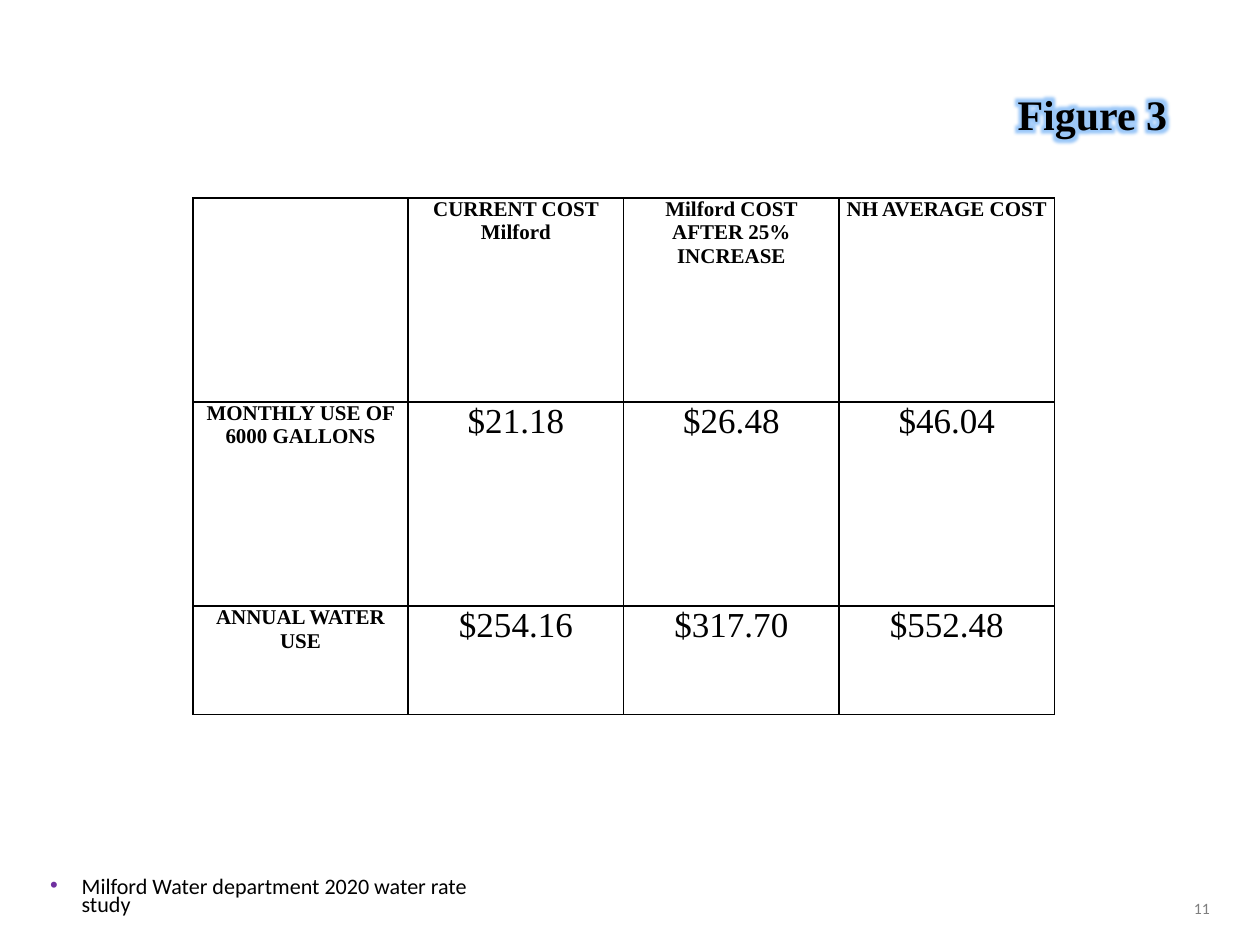
import lxml.etree
import pptx
import pptx.dml.color
import pptx.enum.text
import pptx.oxml.ns
import pptx.util

Inches = pptx.util.Inches
Align = pptx.enum.text.PP_ALIGN
Anchor = pptx.enum.text.MSO_ANCHOR
qn = pptx.oxml.ns.qn

# Content
TITLE = "Figure 3"
SOURCE = "Milford Water department 2020 water rate study"
PAGE_NUMBER = "11"
COSTS = [
    ["", "CURRENT COST Milford", "Milford COST AFTER 25% INCREASE", "NH AVERAGE COST"],
    ["MONTHLY USE OF 6000 GALLONS", "$21.18", "$26.48", "$46.04"],
    ["ANNUAL WATER USE", "$254.16", "$317.70", "$552.48"],
]
ROW_HEIGHTS = [1.62, 1.62, 0.86]
COLUMN_WIDTH = 1.71

THEME = {
    "serif": "Times New Roman", "sans": "Calibri",
    "ink": "000000", "muted": "7F7F7F", "bullet": "7030A0", "glow": "3891F3",
    "title": 24, "label": 12, "value": 20, "source": 12.6, "number": 9,
}


def add_xml(parent, tag, **attributes):
    return lxml.etree.SubElement(parent, qn(tag), attributes)


def write(frame, text, *, size, font="serif", color="ink", bold=False, align=Align.CENTER):
    para = frame.paragraphs[0]
    para.alignment = align
    span = para.add_run()
    span.text = text
    span.font.size = pptx.util.Pt(THEME[size])
    span.font.name = THEME[font]
    span.font.bold = bold
    span.font.color.rgb = pptx.dml.color.RGBColor.from_string(THEME[color])
    return para, span


def add_box(page, left, top, width, height, text, *, wrap=True, anchor=Anchor.TOP, **style):
    box = page.shapes.add_textbox(Inches(left), Inches(top), Inches(width), Inches(height))
    box.text_frame.word_wrap = wrap
    box.text_frame.vertical_anchor = anchor
    return write(box.text_frame, text, **style)


def add_glow(span, color, radius, alpha):
    properties = span.font._element
    effects = lxml.etree.Element(qn("a:effectLst"))
    properties.find(qn("a:solidFill")).addnext(effects)
    glow = add_xml(effects, "a:glow", rad=str(radius))
    shade = add_xml(glow, "a:srgbClr", val=color)
    add_xml(shade, "a:alpha", val=str(alpha * 1000))


def add_bullet(para, color, indent):
    properties = para._p.get_or_add_pPr()
    properties.set("marL", str(indent))
    properties.set("indent", str(-indent))
    add_xml(add_xml(properties, "a:buClr"), "a:srgbClr", val=color)
    add_xml(properties, "a:buFont", typeface="Arial")
    add_xml(properties, "a:buChar", char="•")


def format_cell(cell):
    cell.margin_left = cell.margin_right = Inches(0.06)
    cell.margin_top = cell.margin_bottom = 0
    properties = cell._tc.get_or_add_tcPr()
    for side in ("a:lnL", "a:lnR", "a:lnT", "a:lnB"):
        line = add_xml(properties, side, w=str(pptx.util.Pt(1)))
        add_xml(add_xml(line, "a:solidFill"), "a:srgbClr", val=THEME["ink"])
    cell.fill.background()


def add_cost_table(page, left, top):
    columns = len(COSTS[0])
    table = page.shapes.add_table(
        len(COSTS), columns, Inches(left), Inches(top),
        Inches(COLUMN_WIDTH * columns), Inches(sum(ROW_HEIGHTS))).table
    table.first_row = table.horz_banding = False
    for column in table.columns:
        column.width = Inches(COLUMN_WIDTH)
    for r, texts in enumerate(COSTS):
        table.rows[r].height = Inches(ROW_HEIGHTS[r])
        for c, text in enumerate(texts):
            cell = table.cell(r, c)
            format_cell(cell)
            is_label = r == 0 or c == 0
            if text:
                write(cell.text_frame, text, size="label" if is_label else "value", bold=is_label)


def main():
    deck = pptx.Presentation()
    deck.slide_width, deck.slide_height = Inches(10), Inches(7.5)
    page = deck.slides.add_slide(deck.slide_layouts[6])

    # Source note
    para, span = add_box(page, 0.3, 6.93, 3.6, 0.41, SOURCE,
                         size="source", font="sans", align=Align.LEFT)
    para.line_spacing = 0.7
    para.space_before = pptx.util.Pt(10)
    add_bullet(para, THEME["bullet"], Inches(0.25))

    # Page number
    add_box(page, 7.45, 7.07, 2.25, 0.27, PAGE_NUMBER, size="number", font="sans",
            color="muted", align=Align.RIGHT, anchor=Anchor.MIDDLE)

    # Glowing title
    para, span = add_box(page, 7.97, 0.65, 1.4, 0.5, TITLE, size="title", bold=True, wrap=False)
    add_glow(span, THEME["glow"], radius=pptx.util.Pt(11), alpha=50)

    # Cost comparison
    add_cost_table(page, 1.53, 1.57)

    deck.save("out.pptx")


if __name__ == "__main__":
    main()
